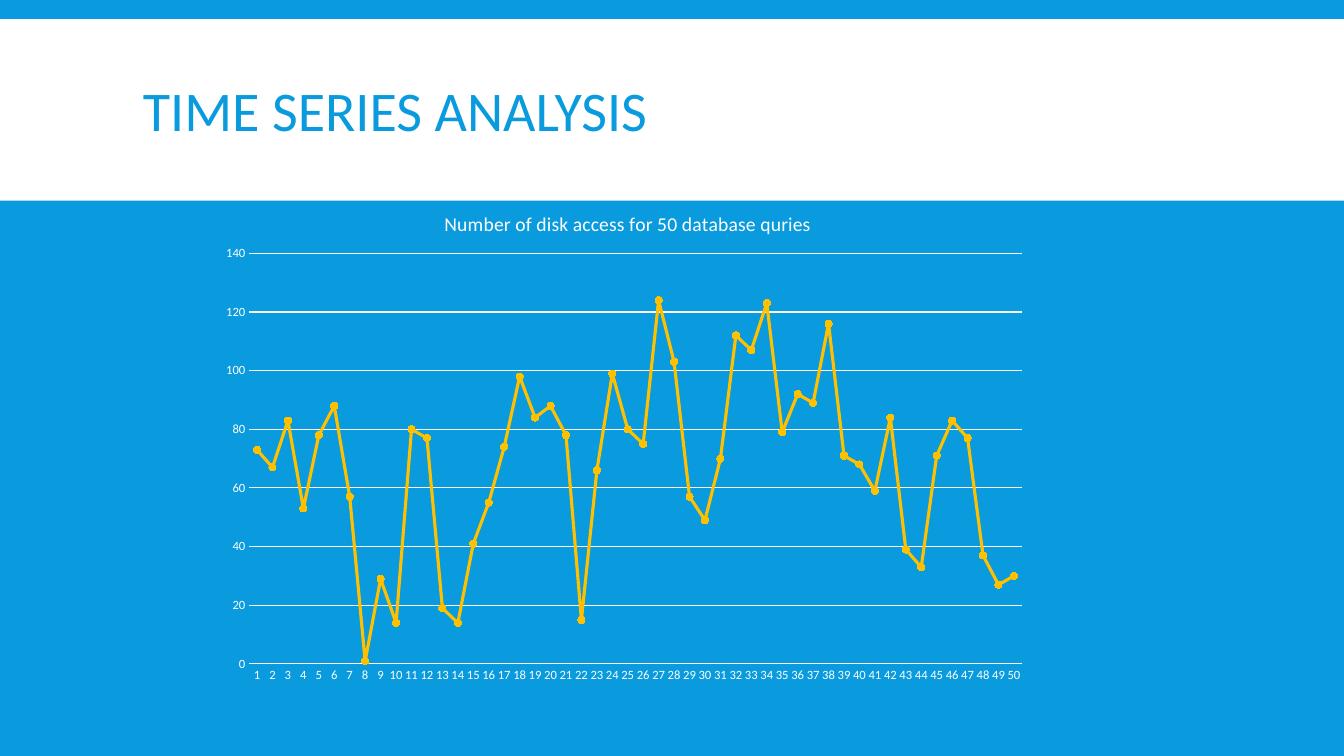
from dataclasses import dataclass

from lxml import etree
from pptx import Presentation
from pptx import util as u
from pptx.chart.data import CategoryChartData
from pptx.dml.color import RGBColor
from pptx.enum import chart as charts, shapes, text
from pptx.oxml.ns import qn

BLUE, WHITE, GOLD = "099BDD", "FFFFFF", "FFC000"
FONT = "Calibri"
DISK_ACCESSES = [
    73, 67, 83, 53, 78, 88, 57, 1, 29, 14,
    80, 77, 19, 14, 41, 55, 74, 98, 84, 88,
    78, 15, 66, 99, 80, 75, 124, 103, 57, 49,
    70, 112, 107, 123, 79, 92, 89, 116, 71, 68,
    59, 84, 39, 33, 71, 83, 77, 37, 27, 30,
]


@dataclass(frozen=True)
class Box:
    left: float
    top: float
    width: float
    height: float

    def inches(self) -> list[u.Length]:
        return [u.Inches(n) for n in (self.left, self.top, self.width, self.height)]


BAND = Box(0, 0.19, 13.33, 1.8)
HEADING = Box(1.32, 0.31, 10.7, 1.65)
CHART = Box(2.07, 1.85, 8.22, 5.03)


def rgb(color: str) -> RGBColor:
    return RGBColor.from_string(color)


def apply(target, values: dict) -> None:
    for name, value in values.items():
        setattr(target, name, value)


def style_font(font, size: float, color: str) -> None:
    apply(font, {"name": FONT, "size": u.Pt(size), "bold": False})
    font.color.rgb = rgb(color)


def style_line(line, color: str, width: float) -> None:
    line.color.rgb = rgb(color)
    line.width = u.Pt(width)


def place(parent, after: str, fractions: dict) -> None:
    """Fix the position of a chart part, as fractions of the chart's size."""
    for old in parent.findall(qn("c:layout")):
        parent.remove(old)
    layout = etree.Element(qn("c:layout"))
    manual = etree.SubElement(layout, qn("c:manualLayout"))
    for name, value in fractions.items():
        etree.SubElement(manual, qn(f"c:{name}")).set("val", str(value))
    if after:
        parent.find(qn(after)).addnext(layout)
    else:
        parent.insert(0, layout)


def add_heading(slide) -> None:
    band = slide.shapes.add_shape(shapes.MSO_SHAPE.RECTANGLE, *BAND.inches())
    band.shadow.inherit = False
    band.fill.solid()
    band.fill.fore_color.rgb = rgb(WHITE)
    band.line.fill.background()

    frame = slide.shapes.add_textbox(*HEADING.inches()).text_frame
    apply(frame, {"word_wrap": True, "vertical_anchor": text.MSO_ANCHOR.MIDDLE})
    heading = frame.paragraphs[0]
    heading.line_spacing = 0.85
    run = heading.add_run()
    run.text = "TIME SERIES ANALYSIS"
    style_font(run.font, 40, BLUE)


def add_access_chart(slide) -> None:
    data = CategoryChartData()
    data.categories = [str(n) for n in range(1, len(DISK_ACCESSES) + 1)]
    data.add_series("Series 1", DISK_ACCESSES)
    chart = slide.shapes.add_chart(
        charts.XL_CHART_TYPE.LINE_MARKERS, *CHART.inches(), data).chart
    apply(chart, {"has_legend": False, "has_title": True})
    style_font(chart.font, 10, WHITE)

    caption = chart.chart_title.text_frame.paragraphs[0].add_run()
    caption.text = "Number of disk access for 50 database quries"
    style_font(caption.font, 14, WHITE)
    place(chart.chart_title._element, "c:tx",
          {"xMode": "edge", "yMode": "edge", "x": 0.28, "y": 0.04})
    place(chart._chartSpace.chart.plotArea, "",
          {"layoutTarget": "inner", "xMode": "edge", "yMode": "edge",
           "x": 0.049, "y": 0.132, "w": 0.932, "h": 0.81})

    for axis in (chart.category_axis, chart.value_axis):
        apply(axis, {"major_tick_mark": charts.XL_TICK_MARK.NONE,
                     "minor_tick_mark": charts.XL_TICK_MARK.NONE})
        style_font(axis.tick_labels.font, 9, WHITE)
    style_line(chart.category_axis.format.line, WHITE, 0.75)
    apply(chart.value_axis, {"minimum_scale": 0, "maximum_scale": 140, "major_unit": 20})
    chart.value_axis.format.line.fill.background()
    style_line(chart.value_axis.major_gridlines.format.line, WHITE, 0.75)

    plot = chart.plots[0]
    plot.vary_by_categories = False
    accesses = plot.series[0]
    accesses.smooth = False
    style_line(accesses.format.line, GOLD, 2.25)
    marker = accesses.marker
    apply(marker, {"style": charts.XL_MARKER_STYLE.CIRCLE, "size": 5})
    marker.format.fill.solid()
    marker.format.fill.fore_color.rgb = rgb(GOLD)
    style_line(marker.format.line, GOLD, 0.75)


def main() -> None:
    deck = Presentation()
    apply(deck, {"slide_width": u.Inches(13.33), "slide_height": u.Inches(7.5)})
    slide = deck.slides.add_slide(deck.slide_layouts[6])
    slide.background.fill.solid()
    slide.background.fill.fore_color.rgb = rgb(BLUE)
    add_heading(slide)
    add_access_chart(slide)
    deck.save("out.pptx")


if __name__ == "__main__":
    main()
